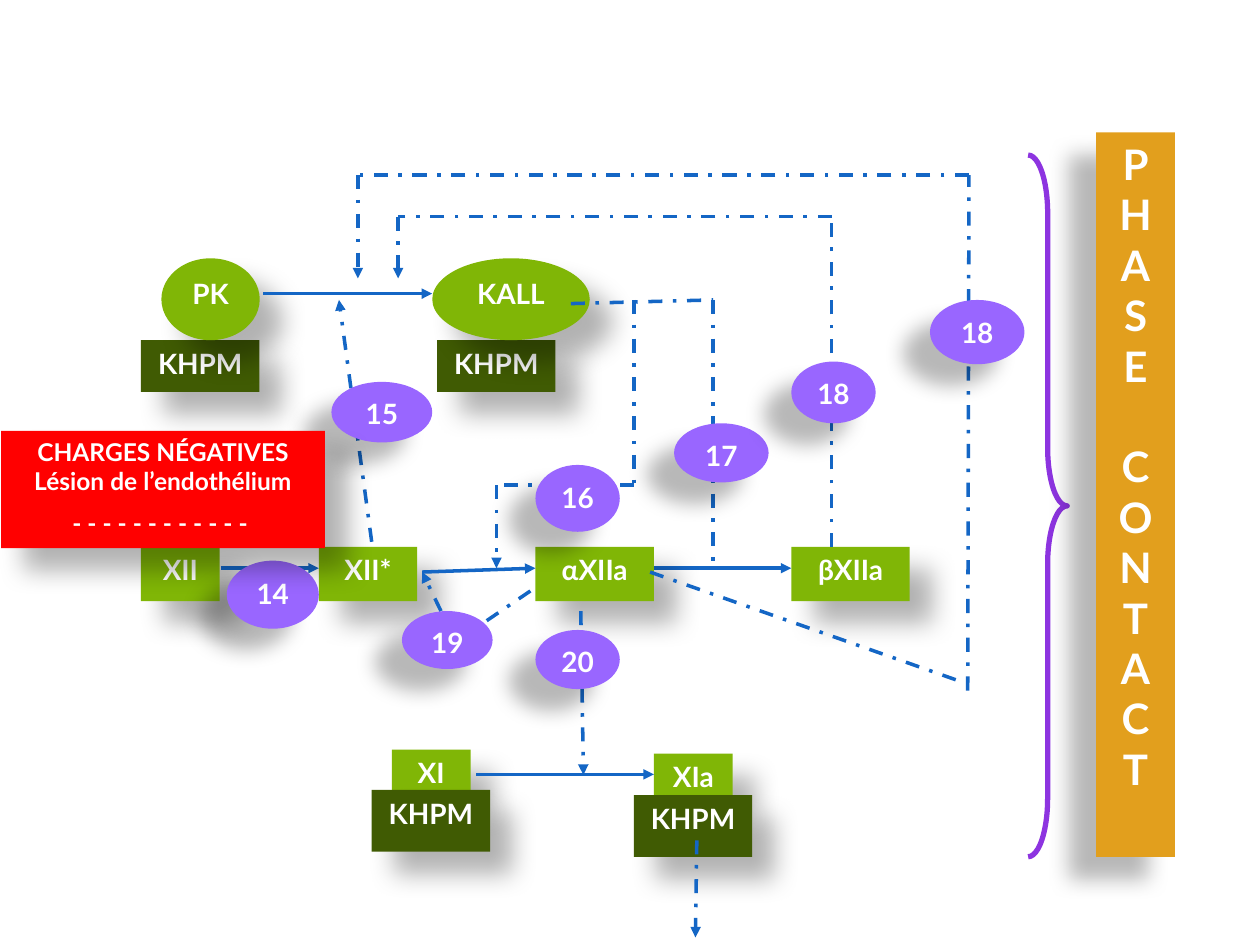
from lxml import etree
from pptx import Presentation
from pptx.dml.color import RGBColor as Color
from pptx.enum.dml import MSO_LINE as Dash
from pptx.enum.shapes import MSO_CONNECTOR as Connector, MSO_SHAPE as Shape
from pptx.enum.text import MSO_ANCHOR as Anchor, PP_ALIGN as Align
from pptx.oxml.ns import qn
from pptx.util import Pt

# Theme: colours, type, line widths and shadows (alpha %, blur, distance, angle)
THEME = {
    "font": "Lato", "text": "FFFFFF",
    "size": 16, "charge_size": 14, "phase_size": 24,
    "factor": "80B606", "carrier": "405B03", "step": "9966FF",
    "phase": "E29F1D", "charge": "FF0000", "flow": "1466C5", "brace": "8D34E0",
    "flow_width": 2, "brace_width": 3,
    "node_shadow": (30, 15, 18, 45), "step_shadow": (28, 11.8, 19.7, 141),
}

# Content: (text, kind, left, top, width, height), in points
NODES = [
    ("KHPM", "carrier", 80.6, 194.4, 67.7, 29.5),
    ("KHPM", "carrier", 249.8, 194.4, 67.7, 29.5),
    ("PK", "oval", 92.2, 147.6, 56.2, 46.8),
    ("KALL", "oval", 247, 147.6, 90, 46.8),
    ("XII", "factor", 80.6, 312.5, 45, 31),
    ("XII*", "factor", 182.2, 312.5, 56.2, 31),
    ("αXIIa", "factor", 306, 312.5, 67.7, 31),
    ("βXIIa", "factor", 452.2, 312.5, 67.7, 31),
    ("XI", "factor", 223.9, 428.4, 45, 23.8),
    ("XIa", "factor", 373.7, 430.6, 45, 23.8),
    ("KHPM", "carrier", 362.2, 454.3, 67.7, 35.3),
    ("KHPM", "carrier", 212.4, 451.4, 67.7, 35.3),
]
STEPS = [
    ("14", "step", 129.6, 320.4, 52.6, 38.9),
    ("15", "step", 189.4, 218.2, 57.6, 34.6),
    ("16", "step", 306, 265.7, 48.2, 38.2),
    ("17", "step", 385.2, 241.9, 54, 33.8),
    ("18", "step", 452.2, 206.6, 48.2, 35.3),
    ("18", "step", 531.4, 171.4, 54, 36.7),
    ("19", "step", 229.7, 349.2, 51.8, 33.1),
    ("20", "step", 306, 360, 48.2, 33.8),
]
CHARGE = ("CHARGES NÉGATIVES Lésion de l’endothélium", "- - - - - - - - - - - - ")
CHARGE_BOX = (0.7, 246.2, 185, 67)
PHASE = "PHASE CONTACT"
PHASE_BOX = (626.4, 75.6, 45, 414)
BRACE_BOX = (587.5, 88.6, 22.3, 401)

# Routes: (points, arrow at the end)
HIDDEN_REACTION = [(362.2, 324.7), (452.2, 324.7)]
REACTIONS = [
    [(241.2, 326.9), (306, 324.7)],
    [(126, 324.7), (182.2, 324.7)],
    [(150.5, 167.8), (247, 167.8)],
]
XI_REACTION = [(272.2, 442.5), (373.7, 442.5)]
FEEDBACKS = [
    ([(326.2, 173.5), (407.5, 171.4), (407.5, 324.7)], False),
    ([(362.2, 171.4), (362.2, 277.2), (283.7, 277.2), (283.7, 324.7)], True),
    ([(212.4, 309.6), (193.7, 171.4)], True),
    ([(475.2, 312.5), (475.2, 123.8), (227.5, 123.8), (227.5, 159.1)], True),
    ([(371.5, 326.9), (547.2, 388.8)], False),
    ([(553, 394.6), (553.7, 100.1), (204.5, 100.1), (204.5, 159.1)], True),
    ([(331.9, 349.2), (333.4, 442.8)], True),
    ([(303.1, 337.7), (269.3, 360.7)], False),
    ([(252, 349.2), (241.2, 326.9)], True),
    ([(398.2, 480.2), (397.4, 535.7)], True),
]


def apply(target, values):
    for name, value in values.items():
        setattr(target, name, value)


def add_shadow(shape, shadow):
    alpha, blur, distance, angle = shadow
    effects = etree.SubElement(shape._element.spPr, qn("a:effectLst"))
    outer = etree.SubElement(effects, qn("a:outerShdw"), blurRad=str(Pt(blur)),
                             dist=str(Pt(distance)), dir=str(angle * 60000),
                             algn="ctr", rotWithShape="0")
    color = etree.SubElement(outer, qn("a:srgbClr"), val="000000")
    etree.SubElement(color, qn("a:alpha"), val=str(alpha * 1000))


def add_box(page, paragraphs, geometry, fill, bounds, size, shadow, wrap=False):
    box = page.shapes.add_shape(geometry, *map(Pt, bounds))
    box.fill.solid()
    box.fill.fore_color.rgb = Color.from_string(THEME[fill])
    box.line.fill.background()
    add_shadow(box, THEME[shadow])
    frame = box.text_frame
    apply(frame, {"word_wrap": wrap, "vertical_anchor": Anchor.TOP})
    for index, text in enumerate(paragraphs):
        para = frame.paragraphs[0] if index == 0 else frame.add_paragraph()
        para.alignment = Align.CENTER
        para.font.size = Pt(THEME[size])
        if text.strip():
            span = para.add_run()
            span.text = text
            apply(span.font, {"name": THEME["font"], "size": Pt(THEME[size]), "bold": True})
            span.font.color.rgb = Color.from_string(THEME["text"])
    return box


def add_node(page, text, kind, *bounds):
    geometry = Shape.OVAL if kind in ("oval", "step") else Shape.RECTANGLE
    fill = "factor" if kind == "oval" else kind
    shadow = "step_shadow" if kind == "step" else "node_shadow"
    return add_box(page, [text], geometry, fill, bounds, "size", shadow)


def add_route(page, points, arrow=True, dashed=False):
    for start, end in zip(points, points[1:]):
        link = page.shapes.add_connector(Connector.STRAIGHT, *map(Pt, start + end))
        link.line.color.rgb = Color.from_string(THEME["flow"])
        link.line.width = Pt(THEME["flow_width"])
        if dashed:
            link.line.dash_style = Dash.DASH_DOT
        if arrow and end == points[-1]:
            etree.SubElement(link.line._get_or_add_ln(), qn("a:tailEnd"), type="triangle")
        etree.SubElement(link._element.spPr, qn("a:effectLst"))
    return link


def main():
    deck = Presentation()
    apply(deck, {"slide_width": Pt(720), "slide_height": Pt(540)})
    page = deck.slides.add_slide(deck.slide_layouts[6])

    # Factors and their carriers
    add_route(page, HIDDEN_REACTION)
    nodes = {node[0]: add_node(page, *node) for node in NODES}

    # Reactions and feedback loops
    for points in REACTIONS:
        add_route(page, points)
    add_route(page, XI_REACTION).end_connect(nodes["XIa"], 1)
    for points, arrow in FEEDBACKS:
        add_route(page, points, arrow, dashed=True)

    # Brace and vertical phase label
    brace = page.shapes.add_shape(Shape.RIGHT_BRACE, *map(Pt, BRACE_BOX))
    brace.shadow.inherit = False
    brace.fill.background()
    brace.line.color.rgb = Color.from_string(THEME["brace"])
    brace.line.width = Pt(THEME["brace_width"])
    brace.adjustments[0] = 1.49
    add_box(page, PHASE, Shape.RECTANGLE, "phase", PHASE_BOX, "phase_size", "step_shadow")

    # Step numbers and the trigger
    for step in STEPS:
        add_node(page, *step)
    charge = add_box(page, CHARGE, Shape.RECTANGLE, "charge", CHARGE_BOX,
                     "charge_size", "node_shadow", wrap=True)
    charge.text_frame.paragraphs[1].space_before = Pt(THEME["charge_size"] / 2)

    deck.save("out.pptx")


if __name__ == "__main__":
    main()
